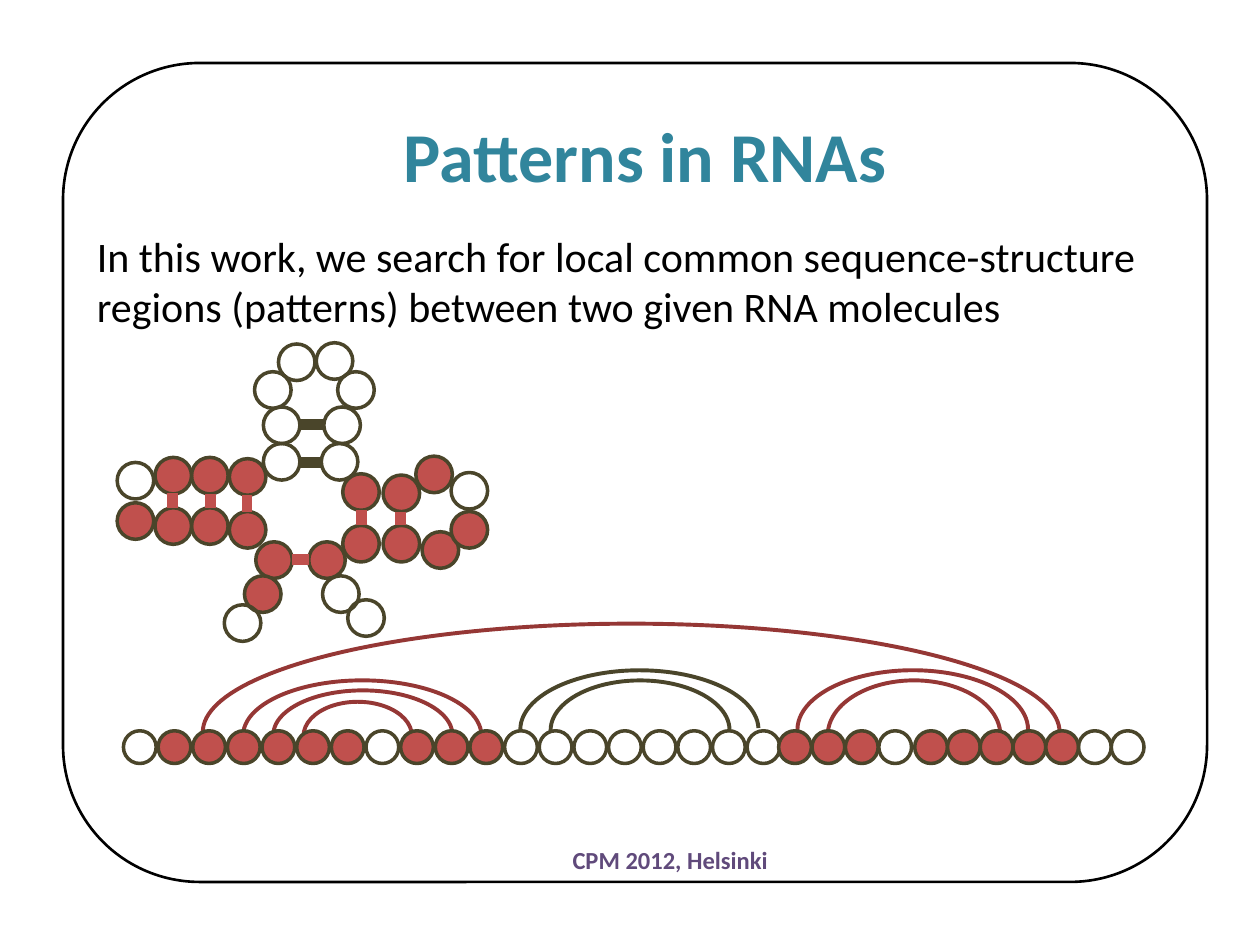
from typing import NamedTuple

from lxml.etree import SubElement
from pptx import Presentation
from pptx.dml.color import RGBColor
from pptx.enum.shapes import MSO_CONNECTOR, MSO_SHAPE as Preset
from pptx.enum.text import MSO_ANCHOR, MSO_AUTO_SIZE, PP_ALIGN
from pptx.oxml.ns import qn
from pptx.util import Inches, Pt

RED, DARK_RED, OLIVE = "C0504D", "953735", "4A452A"
ROW_TOP, ROW_SIZE, FOLD_SIZE = 5.8, 0.26, 0.29


class Box(NamedTuple):
    left: float
    top: float
    width: float
    height: float


class Arc(NamedTuple):
    box: Box
    color: str = DARK_RED
    start: float = 107.338
    end: float = 0.274


class Base(NamedTuple):
    left: float
    top: float
    matched: bool


class Pair(NamedTuple):
    x1: float
    y1: float
    x2: float
    y2: float
    color: str = RED


class Run(NamedTuple):
    """Evenly spaced bases of the flat sequence; R is a matched base."""
    left: float
    pitch: float
    pattern: str


ARCS = [
    Arc(Box(6.57, 5.4, 1.37, 0.87)),
    Arc(Box(2.41, 5.57, 0.86, 0.54)),
    Arc(Box(2.17, 5.48, 1.42, 0.7)),
    Arc(Box(1.93, 5.4, 1.89, 0.87)),
    Arc(Box(1.61, 4.95, 6.8, 1.72), start=107.863, end=0.107),
    Arc(Box(6.33, 5.32, 1.83, 0.94)),
    Arc(Box(4.13, 5.32, 1.89, 0.94), OLIVE, end=215.571),
    Arc(Box(4.37, 5.4, 1.42, 0.79), OLIVE),
]
SEQUENCE = [
    Run(0.98, 0.275, "WRRRRRRWRRRWWWWWWWW"),
    Run(6.18, 0.265, "RRRW"),
    Run(7.26, 0.26, "RRRRRWW"),
]
MATCHED = [
    (1.82, 4.06), (2.72, 4.17), (2.03, 4.3), (2.45, 4.3), (1.82, 3.64),
    (1.52, 4.03), (1.52, 3.63), (3.3, 3.62), (2.72, 3.76), (1.23, 4.03),
    (1.23, 3.63), (0.93, 3.99), (3.04, 4.17), (3.04, 3.77), (3.35, 4.22),
    (3.58, 4.06), (1.94, 4.57),
]
UNMATCHED = [
    (2.55, 3.52), (2.09, 3.52), (0.93, 3.67), (2.56, 4.57), (2.57, 3.23),
    (2.09, 3.23), (2.68, 2.95), (2.51, 2.72), (3.58, 3.75), (1.78, 4.8),
    (2.02, 2.95), (2.76, 4.76), (2.21, 2.73),
]
PAIRS = [
    Pair(2.32, 4.44, 2.45, 4.44),
    Pair(1.96, 4.06, 1.96, 3.93),
    Pair(1.67, 3.92, 1.67, 4.03),
    Pair(1.37, 3.91, 1.37, 4.03),
    Pair(2.87, 4.17, 2.87, 4.05),
    Pair(3.18, 4.06, 3.18, 4.17),
    Pair(2.38, 3.37, 2.57, 3.37, OLIVE),
    Pair(2.38, 3.67, 2.55, 3.67, OLIVE),
]


def rgb(color: str) -> RGBColor:
    return RGBColor.from_string(color)


def set_line(shape, color: str, width: float) -> None:
    shape.line.color.rgb = rgb(color)
    shape.line.width = Pt(width)


def add_outline(slide, preset, box: Box, color: str, width: float, fill: str = ""):
    shape = slide.shapes.add_shape(preset, *map(Inches, box))
    shape.shadow.inherit = False
    if fill:
        shape.fill.solid()
        shape.fill.fore_color.rgb = rgb(fill)
    else:
        shape.fill.background()
    set_line(shape, color, width)
    return shape


def add_arc(slide, arc: Arc) -> None:
    shape = add_outline(slide, Preset.ARC, arc.box, arc.color, 2.25)
    shape.adjustments[0] = arc.start
    shape.adjustments[1] = arc.end


def add_base(slide, base: Base, size: float) -> None:
    add_outline(slide, Preset.OVAL, Box(base.left, base.top, size, size),
                OLIVE, 2, RED if base.matched else "")


def add_pair(slide, pair: Pair) -> None:
    ends = map(Inches, (pair.x1, pair.y1, pair.x2, pair.y2))
    connector = slide.shapes.add_connector(MSO_CONNECTOR.STRAIGHT, *ends)
    set_line(connector, pair.color, 6)
    SubElement(connector._element.spPr, qn("a:effectLst"))


def write_text(shape, text: str, color: str, size: float, bold: bool, align) -> None:
    frame = shape.text_frame
    frame.text = text
    frame_format = {"word_wrap": True, "auto_size": MSO_AUTO_SIZE.NONE,
                    "vertical_anchor": MSO_ANCHOR.TOP}
    for name, value in frame_format.items():
        setattr(frame, name, value)
    paragraph = frame.paragraphs[0]
    paragraph.alignment = align
    font = paragraph.runs[0].font
    for name, value in {"name": "Calibri", "size": Pt(size), "bold": bold}.items():
        setattr(font, name, value)
    font.color.rgb = rgb(color)


def add_text(slide, box: Box, *text_format) -> None:
    write_text(slide.shapes.add_textbox(*map(Inches, box)), *text_format)


def main() -> None:
    presentation = Presentation()
    presentation.slide_width, presentation.slide_height = Inches(10), Inches(7.5)
    slide = presentation.slides.add_slide(presentation.slide_layouts[5])

    title = slide.shapes.title
    for name, value in Box(0.83, 0.84, 8.58, 0.77)._asdict().items():
        setattr(title, name, Inches(value))
    write_text(title, "Patterns in RNAs", "31859C", 40, True, PP_ALIGN.CENTER)

    border = add_outline(slide, Preset.ROUNDED_RECTANGLE, Box(0.5, 0.5, 9.08, 6.5),
                         "000000", 1.5)
    border.adjustments[0] = 0.167
    for arc in ARCS:
        add_arc(slide, arc)
    add_text(slide, Box(0.67, 1.78, 8.82, 3.74),
             "In this work, we search for local common sequence-structure "
             "regions (patterns) between two given RNA molecules",
             "000000", 24, False, PP_ALIGN.LEFT)

    for run in SEQUENCE:
        for index, letter in enumerate(run.pattern):
            left = run.left + index * run.pitch
            add_base(slide, Base(left, ROW_TOP, letter == "R"), ROW_SIZE)
    for places, matched in ((MATCHED, True), (UNMATCHED, False)):
        for left, top in places:
            add_base(slide, Base(left, top, matched), FOLD_SIZE)
    for pair in PAIRS:
        add_pair(slide, pair)

    add_text(slide, Box(2.17, 6.66, 6.3, 0.34), "CPM 2012, Helsinki",
             "604A7B", 14, True, PP_ALIGN.CENTER)
    presentation.save("out.pptx")


if __name__ == "__main__":
    main()
